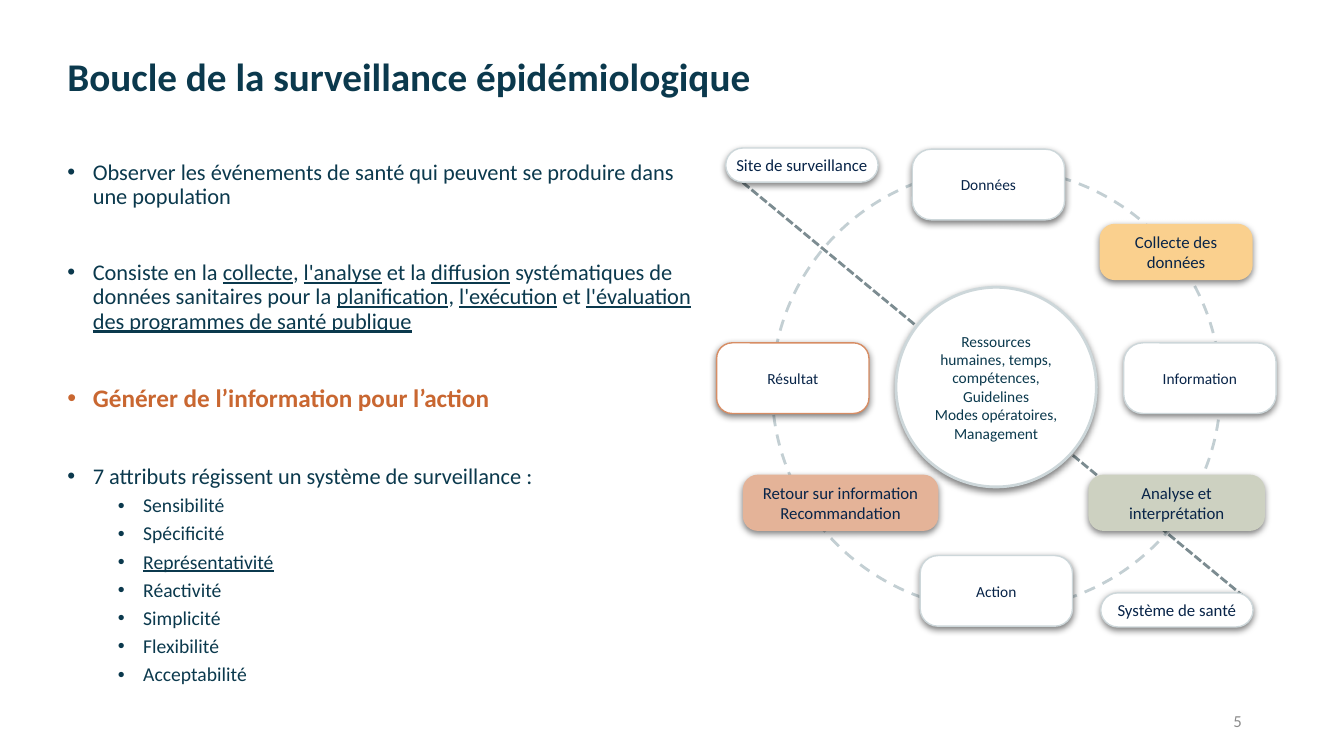
from lxml import etree
from pptx import Presentation
from pptx.dml.color import RGBColor
from pptx.enum.dml import MSO_LINE
from pptx.enum.shapes import MSO_CONNECTOR, MSO_SHAPE
from pptx.enum.text import MSO_ANCHOR, PP_ALIGN
from pptx.oxml.ns import qn
from pptx.util import Cm, Pt

OVAL, ROUNDED = MSO_SHAPE.OVAL, MSO_SHAPE.ROUNDED_RECTANGLE
LEFT, CENTER, RIGHT = PP_ALIGN.LEFT, PP_ALIGN.CENTER, PP_ALIGN.RIGHT
TOP, MIDDLE = MSO_ANCHOR.TOP, MSO_ANCHOR.MIDDLE
DASH, SHORT_DASH = MSO_LINE.DASH, MSO_LINE.SQUARE_DOT
FONT = "Calibri"
TEAL, NAVY, ORANGE, GREY = "0B394D", "082448", "C96731", "8C8C8C"
WHITE, PALE, RUST = "FFFFFF", "CDD7DA", "D78D64"

# Content: underlined passages are (text, True)
TITLE = "Boucle de la surveillance épidémiologique"
PAGE = "5"
POINTS = [
    [("Observer les événements de santé qui peuvent se produire dans une population", False)],
    [("Consiste en la ", False), ("collecte", True), (", ", False), ("l'analyse", True),
     (" et la ", False), ("diffusion", True),
     (" systématiques de données sanitaires pour la ", False), ("planification", True),
     (", ", False), ("l'exécution", True), (" et ", False),
     ("l'évaluation des programmes de santé publique", True)],
    [("Générer de l’information pour l’action", False)],
    [("7 attributs régissent un système de surveillance :", False)],
]
KEY_POINT = 2
ATTRIBUTES = ["Sensibilité", "Spécificité", "Représentativité", "Réactivité",
              "Simplicité", "Flexibilité", "Acceptabilité"]
UNDERLINED_ATTRIBUTE = "Représentativité"

# Loop: positions and sizes in cm
RING = (19.46, 4.24, 11.3, 11.13)
AXIS = (18.72, 4.6, 31.5, 15.16)
STAGE_SIZE, END_SIZE = (3.84, 1.78), (3.84, 0.86)
STAGES = [  # text, left, top, outline, corner
    ("Information", 28.32, 8.64, PALE, 0.27),
    ("Action", 23.19, 14.0, PALE, 0.25),
    ("Résultat", 18.06, 8.64, RUST, 0.22),
    ("Données", 22.99, 3.76, PALE, 0.27),
]
STEP_HEIGHT = 1.42
STEPS = [  # lines, left, top, width, fill
    (["Retour sur information", "Recommandation"], 18.72, 11.96, 4.93, "E4B398"),
    (["Analyse et interprétation"], 27.43, 11.96, 4.45, "CDD1C1"),
    (["Collecte des données"], 27.71, 5.64, 3.86, "FAD08E"),
]
HUB = ["Ressources humaines, temps, compétences,", "Guidelines",
       "Modes opératoires, Management"]
HUB_BOX = (22.58, 7.24, 5.05, 5.03)
ENDS = [("Site de surveillance", 18.29, 3.73), ("Système de santé", 27.74, 14.94)]


def rgb(value):
    return RGBColor.from_string(value)


def add_run(paragraph, text, size, color, bold=False, underline=False):
    run = paragraph.add_run()
    run.text = text
    font = run.font
    font.name, font.size, font.bold, font.underline = FONT, Pt(size), bold, underline
    font.color.rgb = rgb(color)


def next_paragraph(frame, first):
    return frame.paragraphs[0] if first else frame.add_paragraph()


def add_text_box(box, anchor):
    frame = slide.shapes.add_textbox(*map(Cm, box)).text_frame
    frame.word_wrap = True
    frame.vertical_anchor = anchor
    return frame


def add_bullet(paragraph, indent, color):
    props = paragraph._p.get_or_add_pPr()
    props.set("marL", str(Cm(indent)))
    props.set("indent", str(-Cm(0.64)))
    bullet_color = etree.SubElement(props, qn("a:buClr"))
    etree.SubElement(bullet_color, qn("a:srgbClr"), val=color)
    etree.SubElement(props, qn("a:buFont"), typeface="Arial")
    etree.SubElement(props, qn("a:buChar"), char="•")
    paragraph.line_spacing = 0.9


def add_outlined(kind, box, fill, outline, width):
    shape = slide.shapes.add_shape(kind, *map(Cm, box))
    shape.shadow.inherit = False
    shape.fill.solid()
    shape.fill.fore_color.rgb = rgb(fill)
    if outline:
        shape.line.color.rgb = rgb(outline)
        shape.line.width = Pt(width)
    else:
        shape.line.fill.background()
    return shape


def add_node(lines, box, size, fill=WHITE, outline=PALE, width=1,
             kind=ROUNDED, corner=0.27, color=NAVY):
    node = add_outlined(kind, box, fill, outline, width)
    if kind == ROUNDED:
        node.adjustments[0] = corner
    effects = node._element.spPr.find(qn("a:effectLst"))
    shadow = etree.SubElement(effects, qn("a:outerShdw"), blurRad=str(Pt(5)),
                              dist=str(Pt(2)), dir="5400000", rotWithShape="0")
    black = etree.SubElement(shadow, qn("a:srgbClr"), val="000000")
    etree.SubElement(black, qn("a:alpha"), val="50000")
    frame = node.text_frame
    frame.word_wrap = True
    frame.vertical_anchor = MIDDLE
    frame.margin_left = frame.margin_right = Cm(0.13)
    frame.margin_top = frame.margin_bottom = Cm(0.13)
    for i, line in enumerate(lines):
        paragraph = next_paragraph(frame, i == 0)
        paragraph.alignment = CENTER
        add_run(paragraph, line, size, color)


prs = Presentation()
prs.slide_width, prs.slide_height = Cm(33.87), Cm(19.05)
slide = prs.slides.add_slide(prs.slide_layouts[6])

# Ring and dotted axis behind the loop
ring = add_outlined(OVAL, RING, WHITE, "C3CFD3", 2)
ring.line.dash_style = DASH
axis = slide.shapes.add_connector(MSO_CONNECTOR.STRAIGHT, *map(Cm, AXIS))
axis.line.color.rgb = rgb("7C8C91")
axis.line.width = Pt(2)
axis.line.dash_style = SHORT_DASH
etree.SubElement(axis._element.spPr, qn("a:effectLst"))

# Title and page number
for text, box, size, color, bold, align in [
    (TITLE, (1.45, 1.02, 31.04, 1.78), 28, TEAL, True, LEFT),
    (PAGE, (23.93, 17.65, 7.62, 1.02), 12, GREY, False, RIGHT),
]:
    heading = add_text_box(box, MIDDLE).paragraphs[0]
    heading.alignment = align
    add_run(heading, text, size, color, bold)

# Points, then the attributes one level down
points = add_text_box((1.45, 3.94, 16.46, 13.23), TOP)
for i, passages in enumerate(POINTS):
    key = i == KEY_POINT
    size, color = (18, ORANGE) if key else (16, TEAL)
    point = next_paragraph(points, i == 0)
    add_bullet(point, 0.64, color)
    if i:
        point.space_before = Pt(37)
    for text, underline in passages:
        add_run(point, text, size, color, key, underline)
for name in ATTRIBUTES:
    attribute = points.add_paragraph()
    attribute.level = 1
    add_bullet(attribute, 1.91, TEAL)
    attribute.space_before = Pt(5)
    add_run(attribute, name, 14, TEAL, underline=name == UNDERLINED_ATTRIBUTE)

# Surveillance loop
for text, left, top, outline, corner in STAGES:
    add_node([text], (left, top, *STAGE_SIZE), 11, outline=outline, corner=corner)
for lines, left, top, width, fill in STEPS:
    add_node(lines, (left, top, width, STEP_HEIGHT), 12, fill, outline=None)
add_node(HUB, HUB_BOX, 11, width=2, kind=OVAL, color=TEAL)
for text, left, top in ENDS:
    add_node([text], (left, top, *END_SIZE), 12, corner=0.5)

prs.save("out.pptx")
